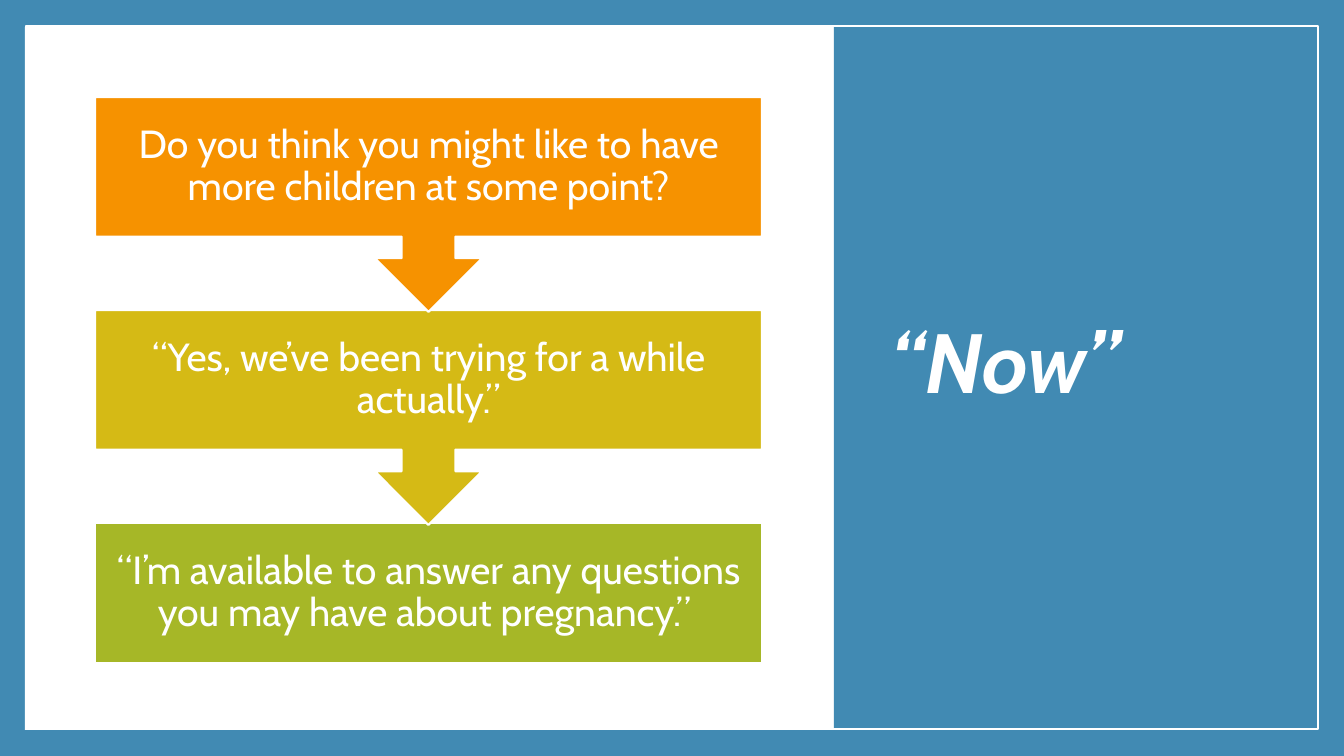
from pptx import Presentation
from pptx.dml.color import RGBColor
from pptx.enum.shapes import MSO_SHAPE
from pptx.enum.text import MSO_ANCHOR, PP_ALIGN
from pptx.util import Pt

RECT = MSO_SHAPE.RECTANGLE
CALL = MSO_SHAPE.DOWN_ARROW_CALLOUT
MID = MSO_ANCHOR.MIDDLE
MID_X, LEFT = PP_ALIGN.CENTER, PP_ALIGN.LEFT
PX = 914400 / 100.8
HUES = {"blue": "418AB3", "white": "FFFFFF", "orange": "F69200",
        "gold": "D5BA15", "green": "A6B727"}


def add_box(kind, x, y, w, h, fill=None, line=None):
    box = slide.shapes.add_shape(kind, *[round(v * PX) for v in (x, y, w, h)])
    box.shadow.inherit = False
    if fill:
        box.fill.solid()
        box.fill.fore_color.rgb = RGBColor.from_string(HUES[fill])
    else:
        box.fill.background()
    if line:
        box.line.color.rgb = RGBColor.from_string(HUES["white"])
        box.line.width = Pt(line)
    else:
        box.line.fill.background()
    return box


def set_text(box, text, size, align, pad):
    frame = box.text_frame
    frame.word_wrap = True
    frame.vertical_anchor = MID
    frame.margin_left = frame.margin_right = round(pad * PX)
    frame.margin_top = frame.margin_bottom = round(pad * PX)
    para = frame.paragraphs[0]
    para.text = text
    para.alignment = align
    para.line_spacing = 0.9
    para.font.name = "Cabin"
    para.font.size = Pt(size)
    para.font.color.rgb = RGBColor.from_string(HUES["white"])
    return para


deck = Presentation()
deck.slide_width, deck.slide_height = round(1344 * PX), round(756 * PX)
slide = deck.slides.add_slide(deck.slide_layouts[6])
slide.background.fill.solid()
slide.background.fill.fore_color.rgb = RGBColor.from_string(HUES["blue"])

# White page, blue side panel and thin frame
add_box(RECT, 25, 27, 1292, 703, "white")
add_box(RECT, 834, 26, 484, 704, "blue")
add_box(RECT, 26, 26, 1292, 703, line=1)

# Title
area = [round(v * PX) for v in (881, 68, 394, 596)]
title = set_text(slide.shapes.add_textbox(*area), "“Now”", 60, LEFT, 10)
title.font.bold = title.font.italic = True

# Flow of steps, drawn from the last one up so each arrow lies on top
steps = [
    ("orange", CALL, 215, "Do you think you might like to have more children at some point?"),
    ("gold", CALL, 215, "“Yes, we’ve been trying for a while actually.”"),
    ("green", RECT, 140, "“I’m available to answer any questions you may have about pregnancy.” "),
]
for row, (hue, kind, high, text) in reversed(list(enumerate(steps))):
    step = add_box(kind, 95, 97 + 213 * row, 667, high, hue, 1.5)
    set_text(step, text, 28, MID_X, 22)

deck.save("out.pptx")
